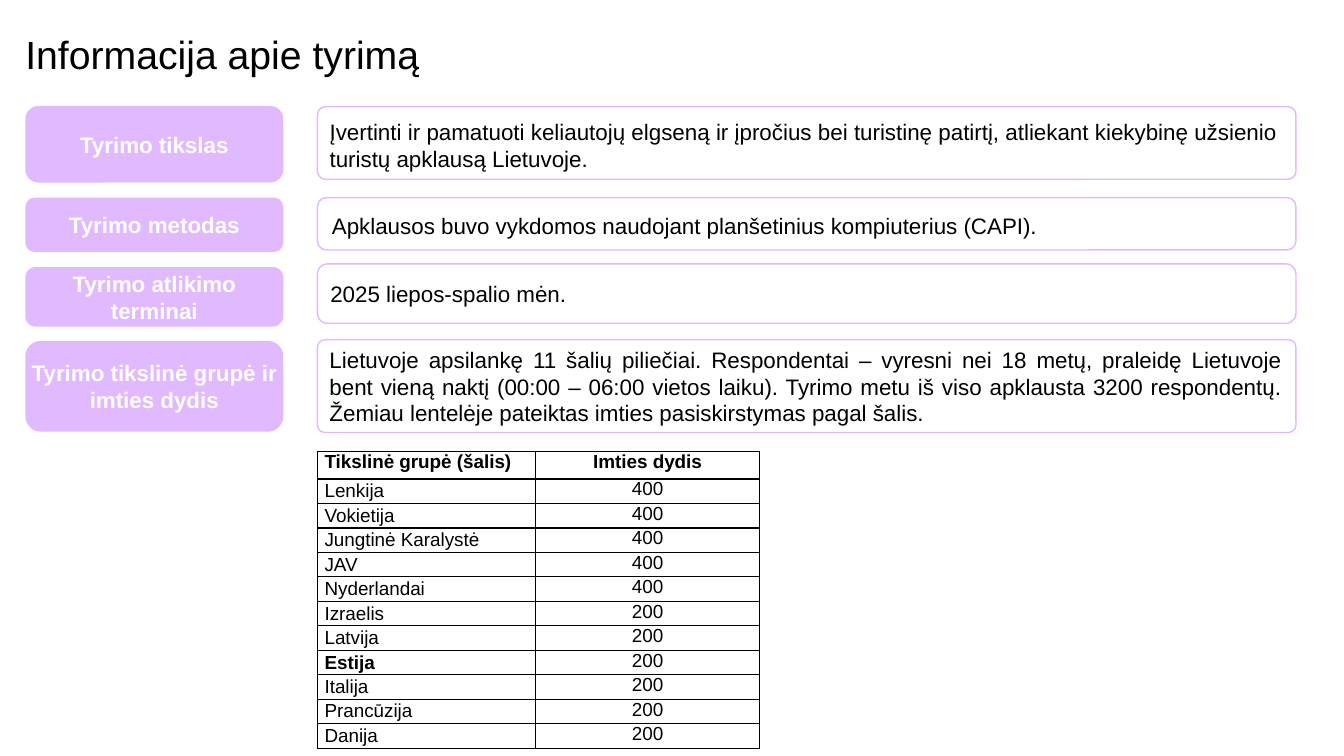
from dataclasses import dataclass

from lxml.etree import SubElement
from pptx import Presentation
from pptx.dml.color import RGBColor
from pptx.enum.shapes import MSO_SHAPE
from pptx.enum.text import MSO_ANCHOR, PP_ALIGN
from pptx.oxml.ns import qn
from pptx.slide import Slide
from pptx.table import _Cell
from pptx.text.text import TextFrame
from pptx.util import Cm, Pt

COLORS = {"lilac": "E1B9FF", "white": "FFFFFF", "black": "000000"}
FONT = "Arial"
NO_INSETS = (0, 0, 0, 0)

# Horizontal layout in cm
LABEL_LEFT, LABEL_WIDTH = 0.64, 6.5
BOX_LEFT, BOX_WIDTH = 8.0, 24.66


@dataclass
class Topic:
    label: str
    label_top: float
    label_height: float
    text: str
    box_top: float
    box_height: float
    rounding: float
    insets: tuple[float, float, float, float]


TOPICS = [
    Topic("Tyrimo tikslas", 2.67, 1.93,
          "Įvertinti ir pamatuoti keliautojų elgseną ir įpročius bei turistinę patirtį, "
          "atliekant kiekybinę užsienio turistų apklausą Lietuvoje.",
          2.69, 1.83, 0.11, (0.25, 0.3, 0.41, 0.2)),
    Topic("Tyrimo metodas", 4.98, 1.37,
          "Apklausos buvo vykdomos naudojant planšetinius kompiuterius (CAPI).",
          4.98, 1.32, 0.17, (0.3, 0.3, 0.41, 0.2)),
    Topic("Tyrimo atlikimo terminai", 6.73, 1.5,
          "2025 liepos-spalio mėn.",
          6.65, 1.5, 0.17, (0.25, 0, 0, 0)),
    Topic("Tyrimo tikslinė grupė ir imties dydis", 8.59, 2.29,
          "Lietuvoje apsilankę 11 šalių piliečiai. Respondentai – vyresni nei 18 metų, "
          "praleidę Lietuvoje bent vieną naktį (00:00 – 06:00 vietos laiku). Tyrimo metu "
          "iš viso apklausta 3200 respondentų. Žemiau lentelėje pateiktas imties "
          "pasiskirstymas pagal šalis.",
          8.56, 2.34, 0.08, (0.25, 0, 0.3, 0)),
]

HEADER = ("Tikslinė grupė (šalis)", "Imties dydis")
SAMPLES = [
    ("Lenkija", 400), ("Vokietija", 400), ("Jungtinė Karalystė", 400), ("JAV", 400),
    ("Nyderlandai", 400), ("Izraelis", 200), ("Latvija", 200), ("Estija", 200),
    ("Italija", 200), ("Prancūzija", 200), ("Danija", 200),
]
BOLD_COUNTRY = "Estija"


def write(tf: TextFrame, text: str, *, size: float = 16, color: str = "black",
          bold: bool = False, align: PP_ALIGN = PP_ALIGN.LEFT,
          spacing: float | None = None) -> None:
    p = tf.paragraphs[0]
    p.alignment = align
    if spacing:
        p.line_spacing = spacing
    r = p.add_run()
    r.text = text
    r.font.name = FONT
    r.font.size = Pt(size)
    r.font.bold = bold
    r.font.color.rgb = RGBColor.from_string(COLORS[color])


def set_insets(target: TextFrame | _Cell, insets: tuple[float, float, float, float]) -> None:
    left, top, right, bottom = insets
    target.margin_left, target.margin_top = Cm(left), Cm(top)
    target.margin_right, target.margin_bottom = Cm(right), Cm(bottom)


def add_panel(s: Slide, left: float, top: float, width: float, height: float, *,
              fill: str, line: str | None = None, rounding: float = 0.17,
              insets: tuple[float, float, float, float] = NO_INSETS) -> TextFrame:
    sp = s.shapes.add_shape(MSO_SHAPE.ROUNDED_RECTANGLE,
                            Cm(left), Cm(top), Cm(width), Cm(height))
    sp.adjustments[0] = rounding
    sp.shadow.inherit = False
    sp.fill.solid()
    sp.fill.fore_color.rgb = RGBColor.from_string(COLORS[fill])
    if line:
        sp.line.color.rgb = RGBColor.from_string(COLORS[line])
        sp.line.width = Pt(1)
    else:
        sp.line.fill.background()
    tf = sp.text_frame
    tf.word_wrap = True
    tf.vertical_anchor = MSO_ANCHOR.MIDDLE
    set_insets(tf, insets)
    return tf


def add_topic(s: Slide, topic: Topic) -> None:
    tf = add_panel(s, LABEL_LEFT, topic.label_top, LABEL_WIDTH, topic.label_height,
                   fill="lilac")
    write(tf, topic.label, color="white", bold=True, align=PP_ALIGN.CENTER)
    tf = add_panel(s, BOX_LEFT, topic.box_top, BOX_WIDTH, topic.box_height,
                   fill="white", line="lilac", rounding=topic.rounding,
                   insets=topic.insets)
    write(tf, topic.text, align=PP_ALIGN.JUSTIFY)


def format_cell(cell: _Cell) -> None:
    set_insets(cell, (0.18, 0, 0.18, 0))
    tc_pr = cell._tc.get_or_add_tcPr()
    for side in ("lnL", "lnR", "lnT", "lnB"):
        ln = SubElement(tc_pr, qn(f"a:{side}"), w=str(Pt(1)))
        fill = SubElement(ln, qn("a:solidFill"))
        SubElement(fill, qn("a:srgbClr"), val=COLORS["black"])
    cell.fill.background()


def add_sample_table(s: Slide) -> None:
    rows = [HEADER, *SAMPLES]
    header_height, row_height = 0.69, 0.57
    widths = (5.49, 5.66)
    table = s.shapes.add_table(
        len(rows), len(widths), Cm(BOX_LEFT), Cm(11.38), Cm(sum(widths)),
        Cm(header_height + row_height * len(SAMPLES))).table
    for column, width in zip(table.columns, widths):
        column.width = Cm(width)
    for i, (country, size) in enumerate(rows):
        is_header = i == 0
        table.rows[i].height = Cm(header_height if is_header else row_height)
        name_cell, size_cell = table.cell(i, 0), table.cell(i, 1)
        format_cell(name_cell)
        format_cell(size_cell)
        write(name_cell.text_frame, country, size=13.5,
              bold=is_header or country == BOLD_COUNTRY,
              spacing=None if is_header else 1.08)
        write(size_cell.text_frame, str(size), size=13.5, bold=is_header,
              align=PP_ALIGN.CENTER)


def main() -> None:
    prs = Presentation()
    prs.slide_width, prs.slide_height = Cm(33.87), Cm(19.05)
    s = prs.slides.add_slide(prs.slide_layouts[6])

    # Title
    tf = s.shapes.add_textbox(Cm(LABEL_LEFT), Cm(0.89), Cm(15.9), Cm(1.02)).text_frame
    tf.word_wrap = True
    set_insets(tf, NO_INSETS)
    write(tf, "Informacija apie tyrimą", size=28, spacing=0.9)

    # Labels with their descriptions
    for topic in TOPICS:
        add_topic(s, topic)

    # Sample sizes by country
    add_sample_table(s)

    prs.save("out.pptx")


if __name__ == "__main__":
    main()
